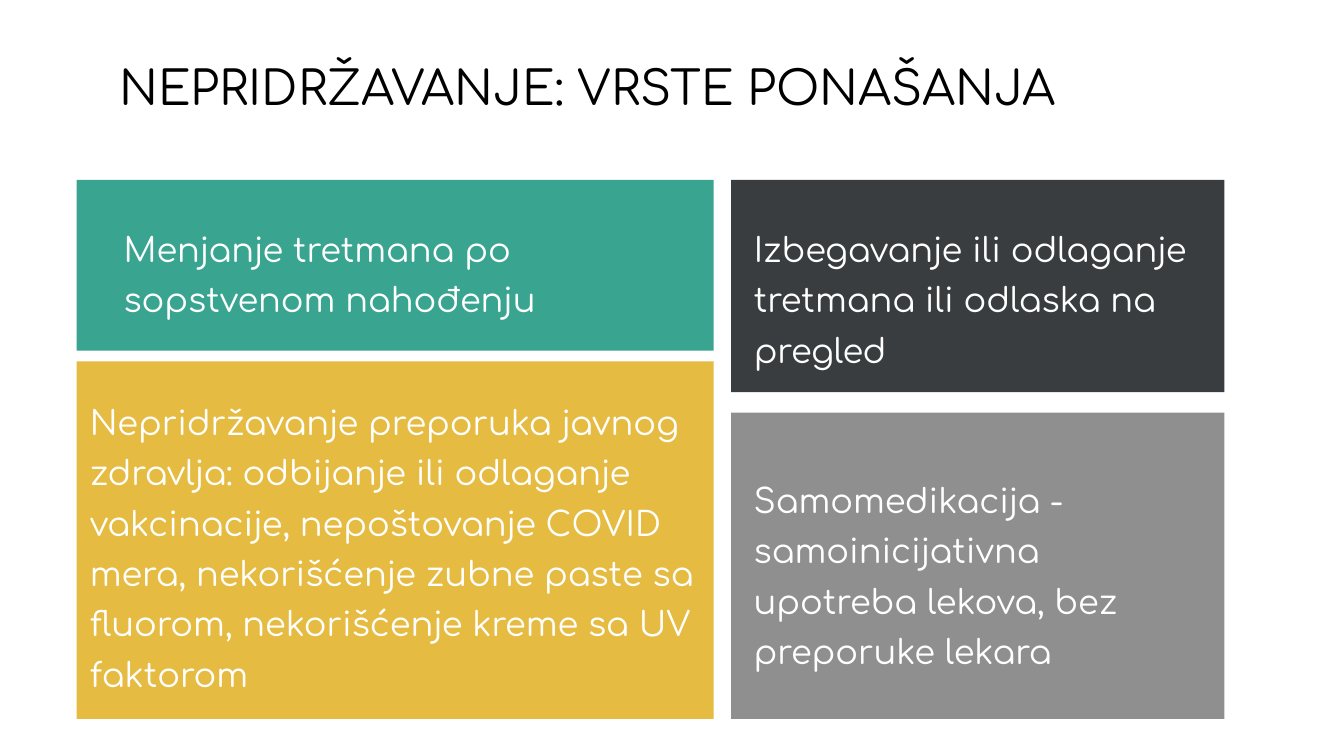
from pptx import Presentation
from pptx.dml.color import RGBColor as RGB
from pptx.enum.shapes import MSO_SHAPE as Shape
from pptx.enum.text import MSO_ANCHOR as Anchor, MSO_AUTO_SIZE as Fit, PP_ALIGN as Align
from pptx.util import Inches, Pt

WIDE = Inches(10)
HIGH = WIDE * 9 // 16
FULL = 100
FONT = "Comfortaa"
BLACK = RGB(0x00, 0x00, 0x00)
WHITE = RGB(0xFF, 0xFF, 0xFF)
GREEN = RGB(0x39, 0xA5, 0x90)
GOLD = RGB(0xE6, 0xBB, 0x41)
DARK = RGB(0x3A, 0x3D, 0x40)
GRAY = RGB(0x8F, 0x8F, 0x90)

PAGE = (0, 0, WIDE, HIGH)
TITLE = (7.9, 5.9, 88.5, 11.2)
LEFT = (5.7, 23.8, 47.4, 71.3)
RIGHT = (54.4, 23.8, 36.7, 71.3)

LEFT_CARDS = [
    (31.7, GREEN, (5.3, 15, 77.4, 69),
     "Menjanje tretmana po sopstvenom nahođenju"),
    (66.3, GOLD, (0, 4.7, 100, 93),
     "Nepridržavanje preporuka javnog zdravlja: odbijanje ili odlaganje "
     "vakcinacije, nepoštovanje COVID mera, nekorišćenje zubne paste sa "
     "fluorom, nekorišćenje kreme sa UV faktorom"),
]
RIGHT_CARDS = [
    (39.4, DARK, (1.9, 12, 97.8, 80),
     "Izbegavanje ili odlaganje tretmana ili odlaska na pregled"),
    (56.8, GRAY, (1.9, 14.2, 90.5, 72),
     "Samomedikacija - samoinicijativna upotreba lekova, bez preporuke lekara"),
]


def part(box, share):
    x, y, w, h = box
    a, b, c, d = (value / FULL for value in share)
    return round(x + a * w), round(y + b * h), round(c * w), round(d * h)


def put(item, values):
    for name, value in values.items():
        setattr(item, name, value)


def write(frame, text, size, color, space, fit, anchor):
    inset = Inches(0.1)
    put(frame, {"text": text, "word_wrap": True, "auto_size": fit,
                "vertical_anchor": anchor, "margin_left": inset,
                "margin_right": inset, "margin_top": inset,
                "margin_bottom": inset})
    line = frame.paragraphs[0]
    put(line, {"alignment": Align.LEFT, "line_spacing": space})
    font = line.runs[0].font
    put(font, {"name": FONT, "size": Pt(size), "bold": False})
    font.color.rgb = color


def head(slide, box, text):
    title = slide.shapes.title
    put(title, dict(zip(("left", "top", "width", "height"), box)))
    write(title.text_frame, text, 25.2, BLACK, 1, Fit.NONE, Anchor.MIDDLE)


def card(slide, box, color, inner, text):
    tile = slide.shapes.add_shape(Shape.RECTANGLE, *box)
    tile.shadow.inherit = False
    tile.fill.solid()
    tile.fill.fore_color.rgb = color
    tile.line.fill.background()
    label = slide.shapes.add_textbox(*part(box, inner))
    write(label.text_frame, text, 18, WHITE, 1.25,
          Fit.SHAPE_TO_FIT_TEXT, Anchor.TOP)


def column(slide, box, cards):
    gap = (FULL - sum(row[0] for row in cards)) / (len(cards) - 1)
    top = 0
    for share, color, inner, text in cards:
        card(slide, part(box, (0, top, FULL, share)), color, inner, text)
        top += share + gap


def main():
    deck = Presentation()
    put(deck, {"slide_width": WIDE, "slide_height": HIGH})
    slide = deck.slides.add_slide(deck.slide_layouts.get_by_name("Title Only"))
    head(slide, part(PAGE, TITLE), "NEPRIDRŽAVANJE: VRSTE PONAŠANJA")
    column(slide, part(PAGE, LEFT), LEFT_CARDS)
    column(slide, part(PAGE, RIGHT), RIGHT_CARDS)
    deck.save("out.pptx")


if __name__ == "__main__":
    main()
